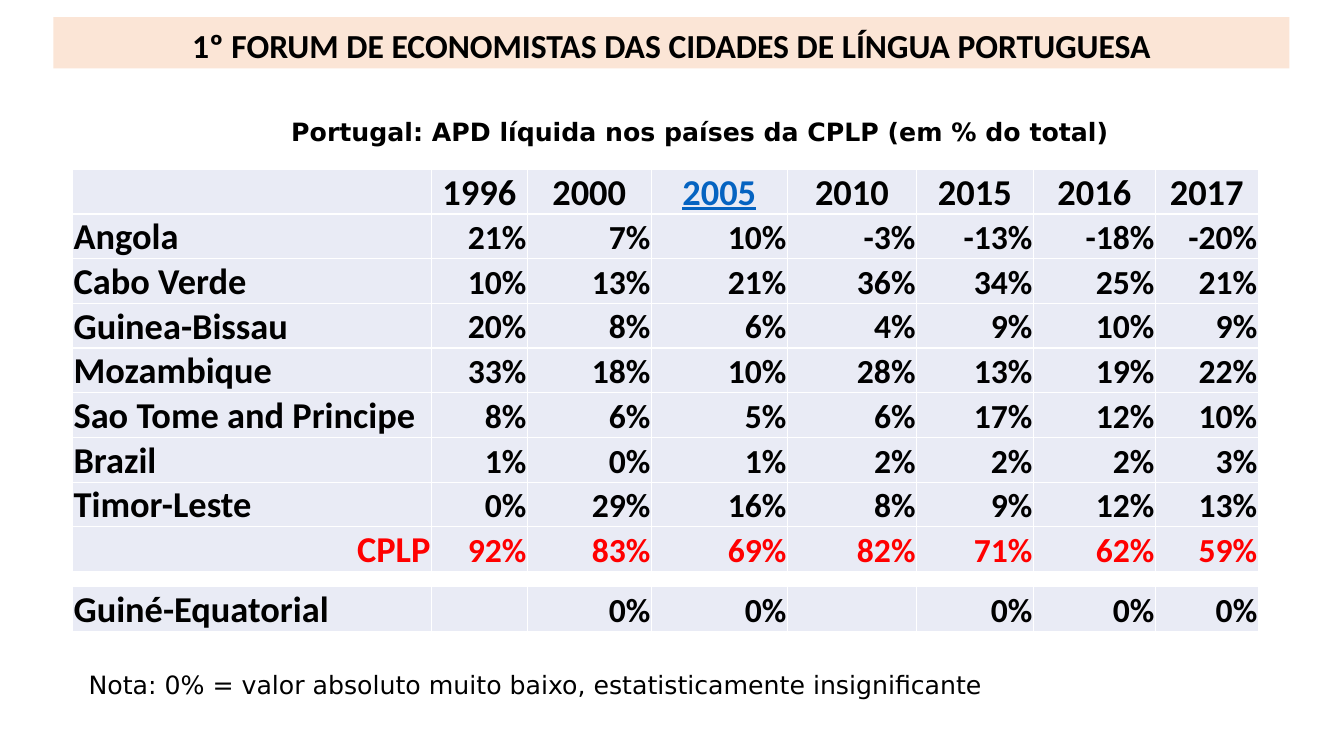
from dataclasses import dataclass

from lxml import etree
from pptx import Presentation
from pptx.dml.color import RGBColor
from pptx.enum.text import MSO_ANCHOR, MSO_AUTO_SIZE, PP_ALIGN
from pptx.oxml.ns import qn
from pptx.util import Inches, Pt

LEFT, CENTER, RIGHT = PP_ALIGN.LEFT, PP_ALIGN.CENTER, PP_ALIGN.RIGHT
TOP, BOTTOM = MSO_ANCHOR.TOP, MSO_ANCHOR.BOTTOM
FIXED = MSO_AUTO_SIZE.NONE


@dataclass(frozen=True)
class Theme:
    ink: str = "000000"
    link: str = "0563C1"
    total: str = "FF0000"
    band: str = "FBE5D6"
    cell: str = "E9EBF5"
    rule: str = "FFFFFF"
    main: str = "Calibri"
    plain: str = "DejaVu Sans"
    label: int = 26
    value: int = 24
    note: int = 18


YEARS = ["", "1996", "2000", "2005", "2010", "2015", "2016", "2017"]
SHARES = {
    "Angola": (21, 7, 10, -3, -13, -18, -20),
    "Cabo Verde": (10, 13, 21, 36, 34, 25, 21),
    "Guinea-Bissau": (20, 8, 6, 4, 9, 10, 9),
    "Mozambique": (33, 18, 10, 28, 13, 19, 22),
    "Sao Tome and Principe": (8, 6, 5, 6, 17, 12, 10),
    "Brazil": (1, 0, 1, 2, 2, 2, 3),
    "Timor-Leste": (0, 29, 16, 8, 9, 12, 13),
    "CPLP": (92, 83, 69, 82, 71, 62, 59),
}
GUINEA = {"Guiné-Equatorial": (None, 0, 0, None, 0, 0, 0)}
WIDTHS = [3.56, 0.95, 1.23, 1.35, 1.28, 1.16, 1.21, 1.02]
ROW = 0.44


def to_rows(shares):
    """Turn each country and its numbers into a row of cell texts."""
    return [[name] + ["" if n is None else f"{n}%" for n in nums]
            for name, nums in shares.items()]


class Board:
    def __init__(self, slide, theme):
        self.slide = slide
        self.theme = theme

    def style(self, para, size, color, face, bold=True, align=LEFT):
        para.alignment = align
        font = para.font
        font.name, font.size, font.bold = face, Pt(size), bold
        font.color.rgb = RGBColor.from_string(color)

    def title(self, text, left, top, width, height):
        look = self.theme
        shape = self.slide.shapes.title
        shape.left, shape.top = Inches(left), Inches(top)
        shape.width, shape.height = Inches(width), Inches(height)
        shape.fill.solid()
        shape.fill.fore_color.rgb = RGBColor.from_string(look.band)
        frame = shape.text_frame
        frame.text = text
        frame.auto_size = FIXED
        frame.vertical_anchor = TOP
        para = frame.paragraphs[0]
        para.line_spacing, para.space_after = 1.07, Pt(8)
        self.style(para, look.value, look.ink, look.main, align=CENTER)

    def text(self, text, left, top, width, height, bold=False):
        look = self.theme
        box = self.slide.shapes.add_textbox(
            Inches(left), Inches(top), Inches(width), Inches(height))
        frame = box.text_frame
        frame.word_wrap = True
        frame.text = text
        self.style(frame.paragraphs[0], look.note, look.ink, look.plain, bold)

    def table(self, rows, left, top):
        frame = self.slide.shapes.add_table(
            len(rows), len(WIDTHS), Inches(left), Inches(top),
            Inches(sum(WIDTHS)), Inches(ROW * len(rows)))
        grid = frame.table
        grid.first_row = grid.horz_banding = False
        for col, width in zip(grid.columns, WIDTHS):
            col.width = Inches(width)
        for line, texts in zip(grid.rows, rows):
            line.height = Inches(ROW)
            for spot, (cell, text) in enumerate(zip(line.cells, texts)):
                self.cell(cell, text, texts[0], spot == 0)

    def cell(self, cell, text, name, first):
        look = self.theme
        cell.margin_left = cell.margin_right = cell.margin_top = Inches(0.01)
        cell.margin_bottom = 0
        self.edges(cell)
        cell.fill.solid()
        cell.fill.fore_color.rgb = RGBColor.from_string(look.cell)
        cell.text = text
        para = cell.text_frame.paragraphs[0]
        color = look.total if name == "CPLP" else look.ink
        size, align = look.label, LEFT
        if not name:
            align = CENTER
            if text == "2005":
                color = look.link
                para.font.underline = True
        elif not first:
            size, align = look.value, RIGHT
            cell.vertical_anchor = BOTTOM
        elif name == "CPLP":
            align = RIGHT
        self.style(para, size, color, look.main, align=align)

    def edges(self, cell):
        props = cell._tc.get_or_add_tcPr()
        for side in ("lnL", "lnR", "lnT", "lnB"):
            line = etree.SubElement(props, qn(f"a:{side}"), w=str(Pt(1)))
            fill = etree.SubElement(line, qn("a:solidFill"))
            etree.SubElement(fill, qn("a:srgbClr"), val=self.theme.rule)


def main():
    deck = Presentation()
    deck.slide_width, deck.slide_height = Inches(13.33), Inches(7.5)
    board = Board(deck.slides.add_slide(deck.slide_layouts[5]), Theme())
    board.title("1º FORUM DE ECONOMISTAS DAS CIDADES DE LÍNGUA PORTUGUESA",
                0.53, 0.17, 12.26, 0.51)
    board.text("Portugal: APD líquida nos países da CPLP (em % do total)",
               2.79, 1.1, 8.49, 0.4, bold=True)
    board.table([YEARS] + to_rows(SHARES), 0.72, 1.68)
    board.table(to_rows(GUINEA), 0.72, 5.82)
    board.text("Nota: 0% = valor absoluto muito baixo, "
               "estatisticamente insignificante", 0.78, 6.59, 9.21, 0.4)
    deck.save("out.pptx")


if __name__ == "__main__":
    main()
